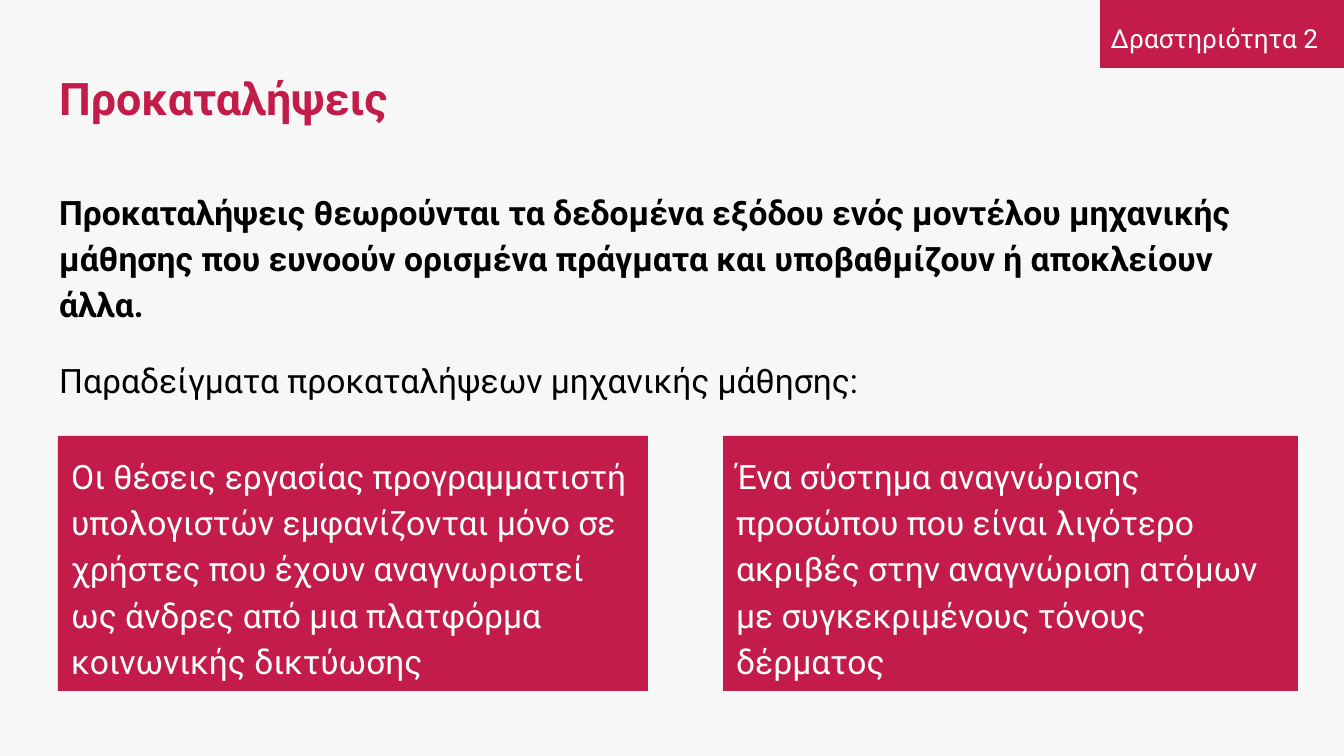
from dataclasses import dataclass

from pptx import Presentation
from pptx.dml.color import RGBColor
from pptx.enum.shapes import MSO_SHAPE as Preset
from pptx.enum.text import MSO_ANCHOR as Anchor, PP_ALIGN as Align
from pptx.slide import Slide
from pptx.util import Emu, Pt

PAGE_WIDTH, PAGE_HEIGHT = 1344, 756
EMU_PER_PX = 9144000 / PAGE_WIDTH


@dataclass(frozen=True)
class Theme:
    font: str = "Roboto"
    background: str = "F7F7F7"
    accent: str = "C31C4A"
    ink: str = "000000"
    light: str = "FFFFFF"
    title_size: int = 24
    body_size: int = 18
    tag_size: int = 14


THEME = Theme()


@dataclass(frozen=True)
class Area:
    left: int
    top: int
    width: int
    height: int


@dataclass(frozen=True)
class Line:
    text: str
    size: int = THEME.body_size
    color: str = THEME.ink
    bold: bool = False
    align: Align = Align.LEFT
    spacing: float = 1.15
    before: int = 0


@dataclass(frozen=True)
class Block:
    area: Area
    lines: tuple[Line, ...] = ()
    fill: str | None = None
    anchor: Anchor = Anchor.TOP
    wrap: bool = True


CARD_TOP, CARD_HEIGHT = 436, 255

BLOCKS = (
    Block(Area(1100, 0, 244, 68), fill=THEME.accent),
    Block(
        Area(46, 172, 1253, 452),
        (
            Line(
                "Προκαταλήψεις θεωρούνται τα δεδομένα εξόδου ενός μοντέλου "
                "μηχανικής μάθησης που ευνοούν ορισμένα πράγματα και "
                "υποβαθμίζουν ή αποκλείουν άλλα.",
                bold=True,
            ),
            Line("Παραδείγματα προκαταλήψεων μηχανικής μάθησης:", before=16),
        ),
    ),
    Block(
        Area(46, 47, 1253, 102),
        (Line("Προκαταλήψεις", THEME.title_size, THEME.accent, bold=True, spacing=1.0),),
        anchor=Anchor.MIDDLE,
    ),
    Block(
        Area(58, CARD_TOP, 590, CARD_HEIGHT),
        (
            Line(
                "Οι θέσεις εργασίας προγραμματιστή υπολογιστών εμφανίζονται "
                "μόνο σε χρήστες που έχουν αναγνωριστεί ως άνδρες από μια "
                "πλατφόρμα κοινωνικής δικτύωσης",
                color=THEME.light,
            ),
        ),
        fill=THEME.accent,
    ),
    Block(
        Area(723, CARD_TOP, 575, CARD_HEIGHT),
        (
            Line(
                "Ένα σύστημα αναγνώρισης προσώπου που είναι λιγότερο ακριβές "
                "στην αναγνώριση ατόμων με συγκεκριμένους τόνους δέρματος",
                color=THEME.light,
            ),
        ),
        fill=THEME.accent,
    ),
    Block(
        Area(1097, 4, 235, 56),
        (Line("Δραστηριότητα 2", THEME.tag_size, THEME.light, align=Align.CENTER),),
        wrap=False,
    ),
)


def px(length: int) -> Emu:
    return Emu(round(length * EMU_PER_PX))


def set_all(target: object, values: dict[str, object]) -> None:
    for name, value in values.items():
        setattr(target, name, value)


def add_block(page: Slide, block: Block) -> None:
    """Draw a filled rectangle, or a plain text box when there is no fill."""
    area = block.area
    bounds = [px(side) for side in (area.left, area.top, area.width, area.height)]
    if block.fill:
        shape = page.shapes.add_shape(Preset.RECTANGLE, *bounds)
        shape.shadow.inherit = False
        shape.fill.solid()
        shape.fill.fore_color.rgb = RGBColor.from_string(block.fill)
        shape.line.fill.background()
    else:
        shape = page.shapes.add_textbox(*bounds)

    frame = shape.text_frame
    inset = Pt(7.2)
    set_all(frame, {
        "word_wrap": block.wrap,
        "vertical_anchor": block.anchor,
        "margin_left": inset,
        "margin_top": inset,
        "margin_right": inset,
        "margin_bottom": inset,
    })
    for index, line in enumerate(block.lines):
        para = frame.add_paragraph() if index else frame.paragraphs[0]
        set_all(para, {
            "alignment": line.align,
            "line_spacing": line.spacing,
            "space_before": Pt(line.before),
        })
        span = para.add_run()
        span.text = line.text
        set_all(span.font, {"name": THEME.font, "size": Pt(line.size), "bold": line.bold})
        span.font.color.rgb = RGBColor.from_string(line.color)


def main() -> None:
    deck = Presentation()
    set_all(deck, {"slide_width": px(PAGE_WIDTH), "slide_height": px(PAGE_HEIGHT)})
    page = deck.slides.add_slide(deck.slide_layouts[6])
    page.background.fill.solid()
    page.background.fill.fore_color.rgb = RGBColor.from_string(THEME.background)
    for block in BLOCKS:
        add_block(page, block)
    deck.save("out.pptx")


if __name__ == "__main__":
    main()
